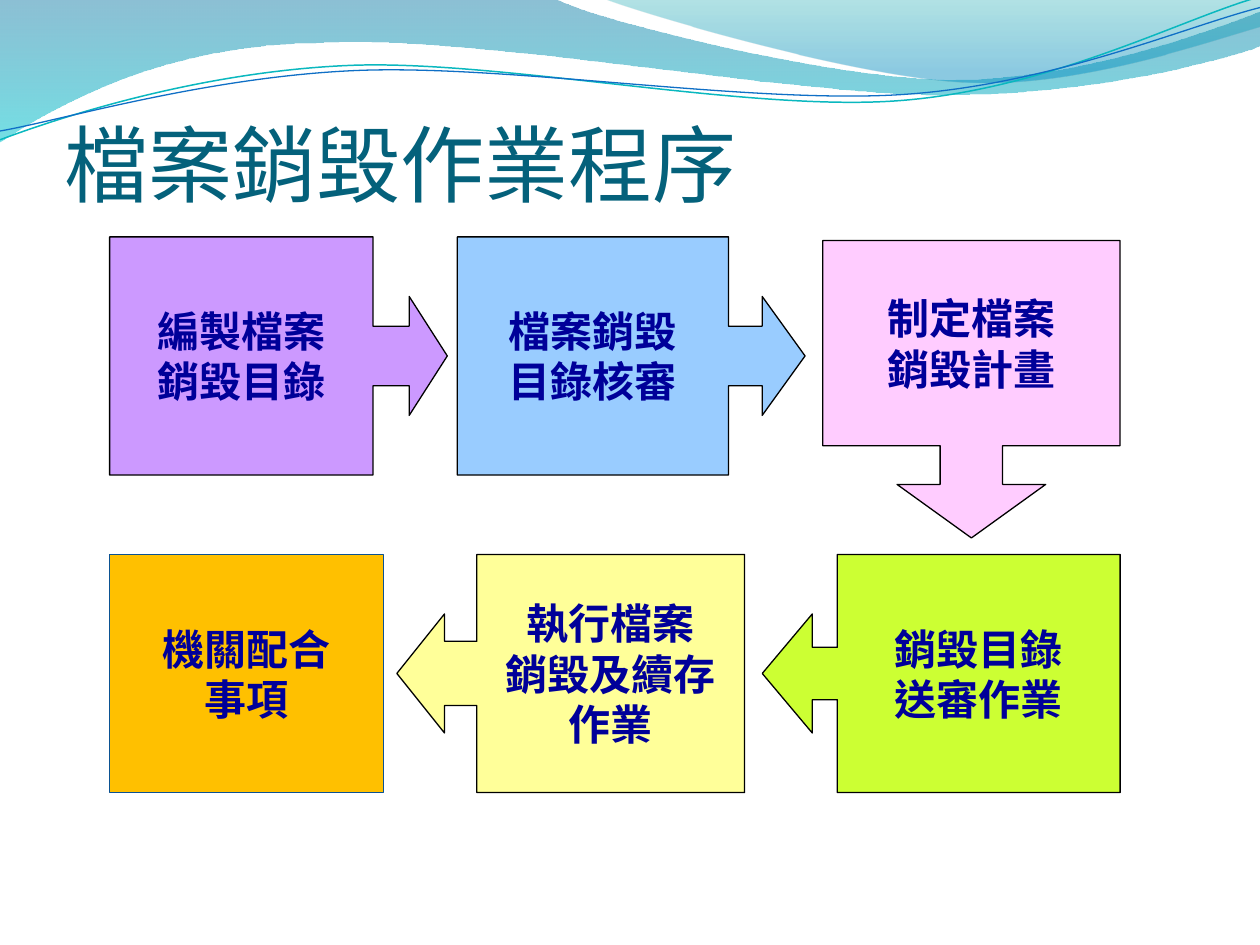
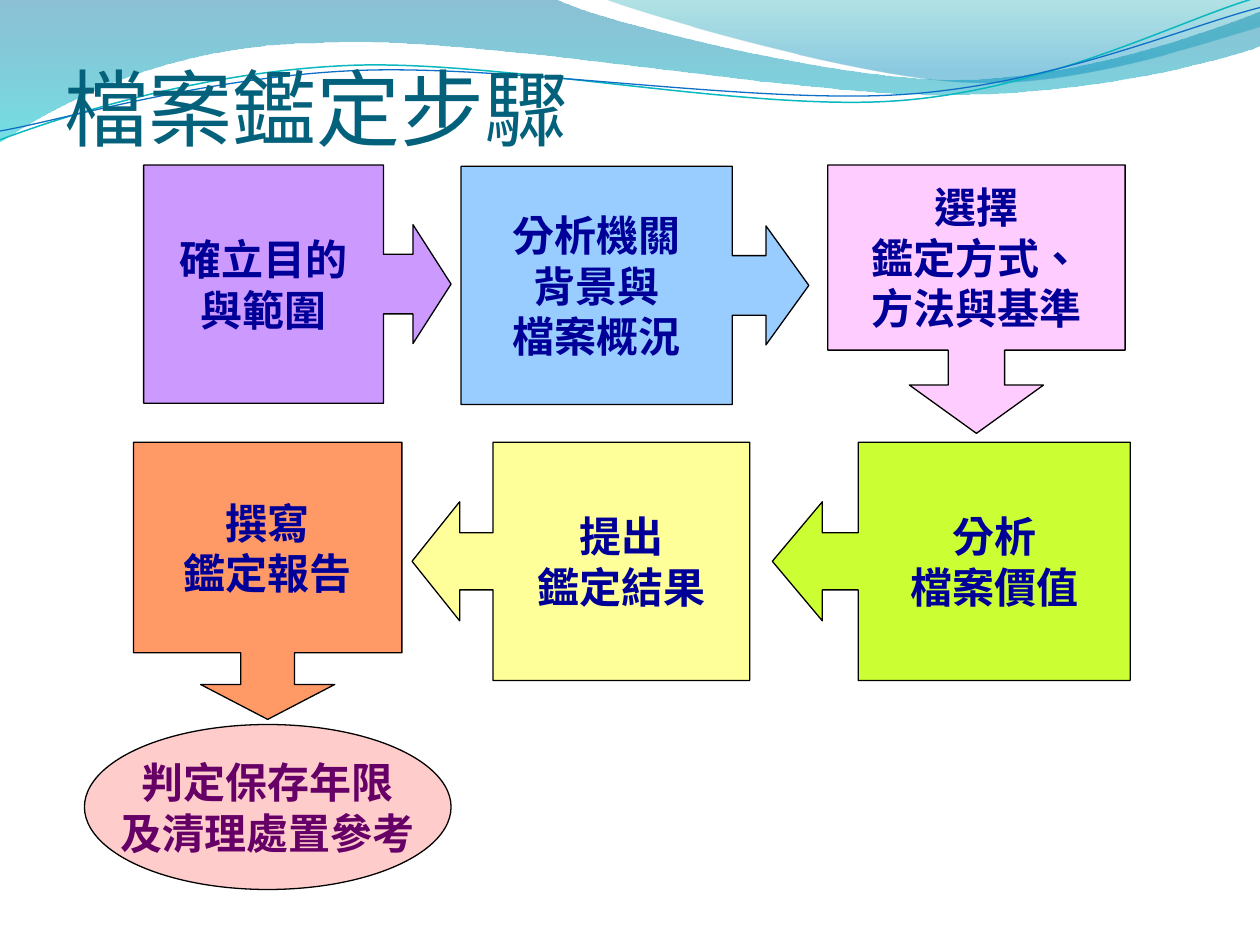
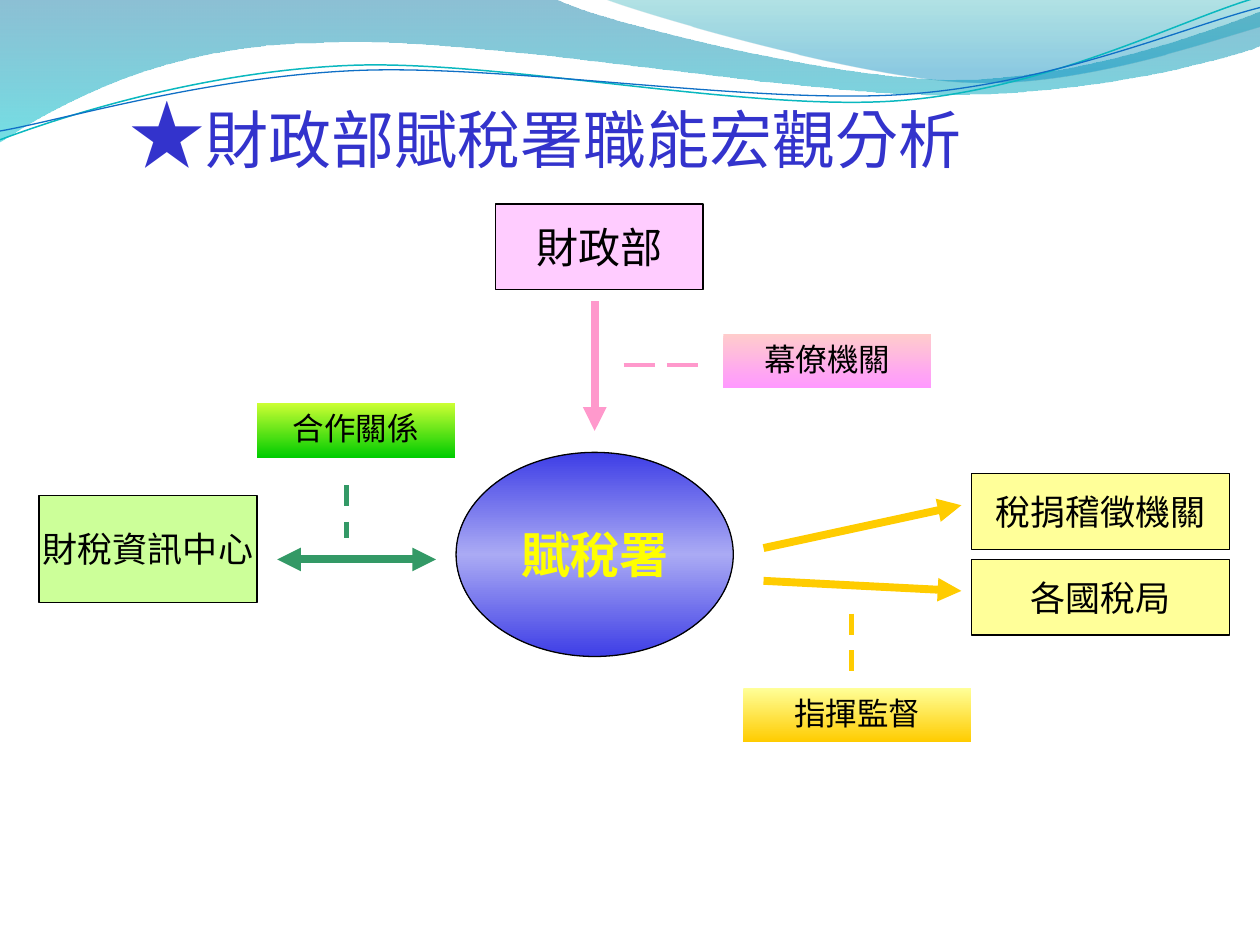
from lxml import etree
from pptx import Presentation
from pptx import util as u
from pptx.dml.color import RGBColor
from pptx.enum import dml, lang, shapes, text
from pptx.oxml.ns import qn

HUE = {
    "ink": "000099", "black": "000000", "title": "04617B", "head": "3333CC",
    "violet": "CC99FF", "sky": "99CCFF", "pink": "FFCCFF", "lime": "CCFF33",
    "cream": "FFFF99", "amber": "FFC000", "coral": "FF9966", "rose": "FFCCCC",
    "plum": "660066", "edge": "0B5292", "mint": "CCFF99", "gold": "FFCC00",
    "green": "339966", "leaf": "00CC00", "blush": "FF99CC", "orchid": "FF99FF",
    "blue": "3E3EE6", "pale": "AAAAF4", "yellow": "FFFF00",
    "deep": "0074A1", "aqua": "00C6CF", "teal": "00A1A9", "azure": "008BBF",
    "cyan": "0AB8BF", "navy": "0F6FC6",
}
FORM = shapes.MSO_SHAPE
RIGHT, LEFT, DOWN = (FORM.RIGHT_ARROW_CALLOUT, FORM.LEFT_ARROW_CALLOUT,
                     FORM.DOWN_ARROW_CALLOUT)

WAVES = [
    ([(0, -0.01), (4.4, -0.01), (4.76, 0.17, 6.64, 0.63, 7.58, 0.63),
      (8.53, 0.63, 9.58, 0.26, 10, 0.09), (10.01, 0.36),
      (9.83, 0.44, 8.7, 0.76, 7.46, 0.75), (6.22, 0.75, 3.82, 0.28, 2.57, 0.34),
      (1.29, 0.35, 0.46, 0.83, -0.01, 1.13)],
     [(0, "deep", 45), (100, "aqua", 55)], None),
    ([(4.79, -0.01), (5.09, 0.11, 6.82, 0.62, 7.69, 0.65),
      (8.56, 0.69, 9.61, 0.32, 10, 0.21), (10, 0)],
     [(0, "teal", 30), (80, "azure", 45)], None),
    ([(0, 1.11), (0.48, 0.93, 1.58, 0.57, 2.77, 0.52),
      (3.95, 0.47, 5.93, 0.89, 7.13, 0.8), (8.33, 0.71, 9.38, 0.15, 9.98, -0.02)],
     None, ("cyan", 0.85)),
    ([(0, 1.04), (0.47, 0.96, 1.64, 0.61, 2.83, 0.56),
      (4.03, 0.51, 5.97, 0.83, 7.17, 0.75), (8.36, 0.67, 9.41, 0.21, 10, 0.06)],
     None, ("navy", 0.75)),
]

DESTROY = [
    (RIGHT, (0.87, 1.88, 2.68, 1.89), "violet", "編製檔案\n銷毀目錄", (0.25, 0.25, 0.16, 0.78)),
    (RIGHT, (3.63, 1.88, 2.76, 1.89), "sky", "檔案銷毀\n目錄核審", (0.25, 0.25, 0.18, 0.78)),
    (DOWN, (6.53, 1.91, 2.36, 2.36), "pink", "制定檔案\n銷毀計畫", (0.21, 0.25, 0.18, 0.69)),
    (LEFT, (6.05, 4.4, 2.84, 1.89), "lime", "銷毀目錄\n送審作業", (0.22, 0.25, 0.21, 0.79)),
    (LEFT, (3.15, 4.4, 2.76, 1.89), "cream", "執行檔案\n銷毀及續存\n作業", (0.27, 0.25, 0.2, 0.77)),
]
APPRAISE = [
    (RIGHT, (1.14, 1.31, 2.44, 1.89), "violet", "確立目的\n與範圍", (0.25, 0.25, 0.16, 0.78)),
    (RIGHT, (3.66, 1.32, 2.76, 1.89), "sky", "分析機關\n背景與\n檔案概況", (0.25, 0.25, 0.18, 0.78)),
    (DOWN, (6.57, 1.31, 2.36, 2.13), "pink", "選擇\n鑑定方式、\n方法與基準", (0.21, 0.25, 0.18, 0.69)),
    (LEFT, (6.13, 3.51, 2.84, 1.89), "lime", "分析\n檔案價值", (0.24, 0.25, 0.21, 0.76)),
    (LEFT, (3.27, 3.51, 2.68, 1.89), "cream", "提出\n鑑定結果", (0.24, 0.25, 0.2, 0.76)),
    (DOWN, (1.06, 3.51, 2.13, 2.2), "coral", "撰寫\n鑑定報告", (0.2, 0.25, 0.13, 0.76)),
]
UNITS = [
    ((3.93, 1.62, 1.65, 0.68), "pink", "財政部", 24),
    ((0.31, 3.93, 1.73, 0.85), "mint", "財稅資訊中心", 20),
    ((7.71, 4.44, 2.05, 0.6), "cream", "各國稅局", 20),
    ((7.71, 3.76, 2.05, 0.6), "cream", "稅捐稽徵機關", 20),
]
TAGS = [
    ((2.04, 3.2, 1.57, 0.43), ("lime", "leaf"), "合作關係"),
    ((5.9, 5.46, 1.81, 0.43), ("cream", "gold"), "指揮監督"),
    ((5.74, 2.65, 1.65, 0.43), ("rose", "orchid"), "幕僚機關"),
]
DASH = dml.MSO_LINE.DASH
LINKS = [
    ((6.06, 4.61, 7.63, 4.69), "gold", 4.5, None, ["tailEnd"]),
    ((6.06, 4.35, 7.63, 4.01), "gold", 4.5, None, ["tailEnd"]),
    ((2.2, 4.44, 3.46, 4.44), "green", 4.5, None, ["headEnd", "tailEnd"]),
    ((4.95, 2.9, 5.58, 2.9), "blush", 2.25, dml.MSO_LINE.LONG_DASH, []),
    ((2.75, 3.85, 2.75, 4.27), "green", 3, DASH, []),
    ((4.72, 3.42, 4.72, 2.39), "blush", 4.5, None, ["headEnd"]),
    ((6.76, 4.87, 6.76, 5.38), "gold", 3, DASH, []),
]


def put(obj, **vals):
    """Set each named attribute on an object."""
    for name, val in vals.items():
        setattr(obj, name, val)


def rgb(name):
    """Look up a colour by name."""
    return RGBColor.from_string(HUE[name])


def place(obj, box):
    """Move and size a shape in inches."""
    put(obj, **dict(zip(("left", "top", "width", "height"), map(u.Inches, box))))


def style(run, size, hue, bold=False, face="Arial"):
    """Format one run of text."""
    put(run.font, size=u.Pt(size), bold=bold, name=face,
        language_id=lang.MSO_LANGUAGE_ID.TRADITIONAL_CHINESE)
    run.font.color.rgb = rgb(hue)


def stroke(line, hue, width):
    """Give a line its colour and width."""
    line.color.rgb = rgb(hue)
    line.width = u.Pt(width)


def blend(shape, stops):
    """Fill a shape from top to bottom with stops of place, colour and opacity."""
    shape.fill.gradient()
    shape.fill.gradient_angle = 270
    row = shape.element.spPr.find(".//" + qn("a:gsLst"))
    for old in list(row):
        row.remove(old)
    for pos, hue, alpha in stops:
        stop = etree.SubElement(row, qn("a:gs"), pos=str(pos * 1000))
        tint = etree.SubElement(stop, qn("a:srgbClr"), val=HUE[hue])
        if alpha < 100:
            etree.SubElement(tint, qn("a:alpha"), val=str(alpha * 1000))


def curve(slide, route, close):
    """Draw an outline whose pairs are lines and whose sixes are cubic curves."""
    pts = [tuple(map(u.Inches, seg[n:n + 2])) for seg in route
           for n in range(0, len(seg), 2)]
    pen = slide.shapes.build_freeform(*pts[0])
    pen.add_line_segments(pts[1:], close=close)
    shape = pen.convert_to_shape()
    nodes = iter(list(shape.element.spPr.iter(qn("a:lnTo"))))
    for seg in route[1:]:
        first = next(nodes)
        if len(seg) == 6:
            first.tag = qn("a:cubicBezTo")
            for _ in range(2):
                node = next(nodes)
                first.append(node[0])
                node.getparent().remove(node)
    return shape


def waves(slide, layout):
    """Draw the waves and hand them to the layout that all slides share."""
    for n, (route, stops, line) in enumerate(WAVES):
        wave = curve(slide, route, bool(stops))
        wave.shadow.inherit = False
        if stops:
            blend(wave, stops)
            wave.line.fill.background()
        else:
            wave.fill.background()
            stroke(wave.line, *line)
        wave.element.nvSpPr.cNvPr.id = 20 + n
        layout.shapes.element.insert(2 + n, wave.element)


def title(slide, box, runs):
    """Fill the title with runs of words, size and colour."""
    head = slide.shapes.title
    place(head, box)
    put(head.text_frame, vertical_anchor=text.MSO_ANCHOR.BOTTOM, word_wrap=True,
        auto_size=text.MSO_AUTO_SIZE.NONE, margin_left=0, margin_right=0,
        margin_top=u.Inches(0.05), margin_bottom=0)
    para = head.text_frame.paragraphs[0]
    para.alignment = text.PP_ALIGN.LEFT
    for words, size, hue in runs:
        run = para.add_run()
        run.text = words
        style(run, size, hue, face="Vollkorn")


def block(slide, form, box, fill, words, size=24, hue="ink", bold=True,
          line=("black", 0.75), wrap=False):
    """Add a shape with centred text; a list as fill makes a gradient."""
    shape = slide.shapes.add_shape(form, *map(u.Inches, box))
    shape.shadow.inherit = False
    if isinstance(fill, list):
        blend(shape, fill)
    else:
        shape.fill.solid()
        shape.fill.fore_color.rgb = rgb(fill)
    if line:
        stroke(shape.line, *line)
    else:
        shape.line.fill.background()
    frame = shape.text_frame
    put(frame, word_wrap=wrap, vertical_anchor=text.MSO_ANCHOR.MIDDLE)
    frame.text = words
    for para in frame.paragraphs:
        para.alignment = text.PP_ALIGN.CENTER
        style(para.runs[0], size, hue, bold)
    return shape


def flow(slide, steps):
    """Add a chain of arrow callouts."""
    for form, box, fill, words, bends in steps:
        shape = block(slide, form, box, fill, words)
        for n, bend in enumerate(bends):
            shape.adjustments[n] = bend


def tag(slide, box, pair, words):
    """Add a gradient label without an outline."""
    stops = [(0, pair[0], 100), (100, pair[1], 100)]
    shape = block(slide, FORM.RECTANGLE, box, stops, words, 18, "black", False,
                  None, True)
    put(shape.text_frame, vertical_anchor=text.MSO_ANCHOR.TOP,
        auto_size=text.MSO_AUTO_SIZE.SHAPE_TO_FIT_TEXT)


def link(slide, ends, hue, width, dash, heads):
    """Add a straight line with its dashes and arrowheads."""
    wire = slide.shapes.add_connector(shapes.MSO_CONNECTOR.STRAIGHT,
                                      *map(u.Inches, ends))
    stroke(wire.line, hue, width)
    if dash:
        wire.line.dash_style = dash
    prop = wire.element.spPr
    for head in heads:
        etree.SubElement(prop.find(qn("a:ln")), qn("a:" + head), type="triangle")
    etree.SubElement(prop, qn("a:effectLst"))


def main():
    """Build the three slides and save them."""
    deck = Presentation()
    put(deck, slide_width=u.Inches(10), slide_height=u.Inches(7.5))
    layout = deck.slide_layouts[5]
    first, second, third = [deck.slides.add_slide(layout) for _ in range(3)]
    waves(first, layout)

    title(first, (0.51, 0.44, 9, 1.25), [("檔案銷毀作業程序", 48, "title")])
    flow(first, DESTROY)
    block(first, FORM.RECTANGLE, (0.87, 4.4, 2.17, 1.89), "amber",
          "機關配合\n事項", line=("edge", 0.5), wrap=True)

    title(second, (0.51, 0, 9, 1.25), [("檔案鑑定步驟", 48, "title")])
    block(second, FORM.OVAL, (0.67, 5.75, 2.91, 1.31), "rose",
          "判定保存年限\n及清理處置參考", hue="plum")
    flow(second, APPRAISE)

    title(third, (1.03, 0.68, 7.85, 0.74),
          [("★", 43.2, "head"), ("財政部賦稅署職能宏觀分析", 36, "head")])
    block(third, FORM.OVAL, (3.62, 3.59, 2.2, 1.62),
          [(0, "blue", 100), (50, "pale", 100), (100, "blue", 100)],
          "賦稅署", 28, "yellow")
    for box, fill, words, size in UNITS:
        block(third, FORM.RECTANGLE, box, fill, words, size, "black", False)
    for item in LINKS:
        link(third, *item)
    for item in TAGS:
        tag(third, *item)
    deck.save("out.pptx")


if __name__ == "__main__":
    main()
